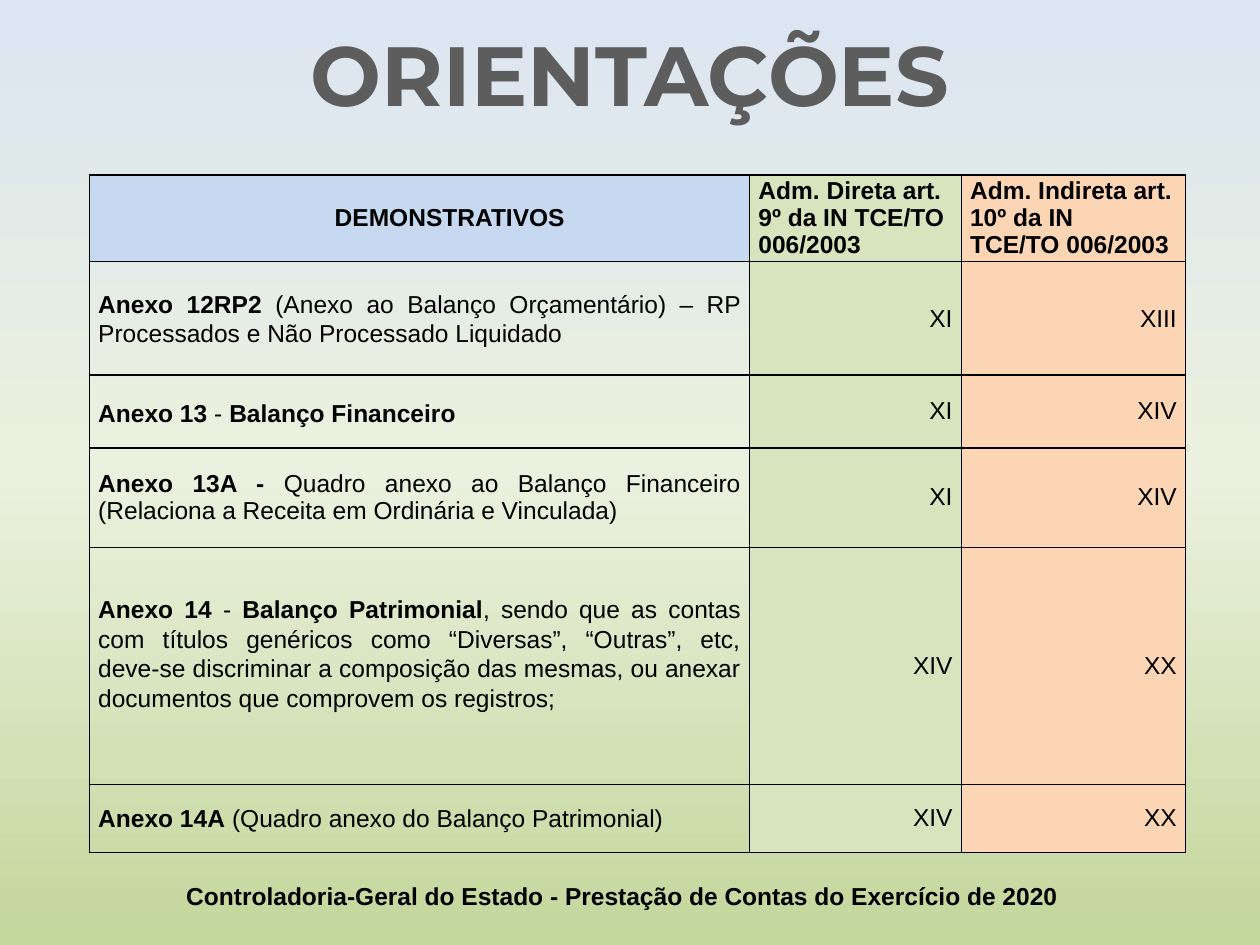
from copy import deepcopy

from lxml import etree
from pptx import Presentation
from pptx.dml.color import RGBColor
from pptx.enum.text import MSO_ANCHOR, MSO_AUTO_SIZE, PP_ALIGN
from pptx.oxml.ns import qn
from pptx.util import Inches, Pt

CENTER, LEFT, RIGHT, JUSTIFY = PP_ALIGN.CENTER, PP_ALIGN.LEFT, PP_ALIGN.RIGHT, PP_ALIGN.JUSTIFY
MIDDLE = MSO_ANCHOR.MIDDLE
FIT_SHAPE = MSO_AUTO_SIZE.SHAPE_TO_FIT_TEXT
TITLE_ONLY = 5

BLUE, GREEN, ORANGE = "C6D9F1", "D7E4BD", "FCD5B5"
COLUMN_WIDTHS = [5.24, 1.68, 1.78]
ROW_HEIGHTS = [0.63, 0.9, 0.58, 0.79, 1.88, 0.54]

# Each paragraph is a list of spans: (words, bold).
HEADERS = [
    [[("DEMONSTRATIVOS", True)]],
    [[("Adm. Direta art. 9º da IN TCE/TO 006/2003", True)]],
    [[("Adm. Indireta art. 10º da IN", True)], [("TCE/TO 006/2003", True)]],
]
# Description, direct and indirect item, line spacing, space kept below the description.
ROWS = [
    ([("Anexo 12RP2 ", True),
      ("(Anexo ao Balanço Orçamentário) – RP Processados e Não Processado Liquidado", False)],
     "XI", "XIII", 1.07, 0),
    ([("Anexo 13", True), (" - ", False), ("Balanço Financeiro", True)],
     "XI", "XIV", 1.15, 0),
    ([("Anexo 13A - ", True),
      ("Quadro anexo ao Balanço Financeiro (Relaciona a Receita em Ordinária e Vinculada)", False)],
     "XI", "XIV", 0.98, 0),
    ([("Anexo 14", True), (" - ", False), ("Balanço Patrimonial", True),
      (", sendo que as contas com títulos genéricos como “Diversas”, “Outras”, etc, deve-se "
       "discriminar a composição das mesmas, ou anexar documentos que comprovem os registros;",
       False)],
     "XIV", "XX", 1.07, 0.2),
    ([("Anexo 14A", True), (" (Quadro anexo do Balanço Patrimonial)", False)],
     "XIV", "XX", 1.07, 0),
]


def color(value):
    return RGBColor.from_string(value)


def write(frame, paragraphs, size=14, font="Arial", ink="000000", align=LEFT,
          spacing=None, indent=0):
    """Fill a text frame with paragraphs made of (words, bold) spans."""
    for index, spans in enumerate(paragraphs):
        para = frame.add_paragraph() if index else frame.paragraphs[0]
        para.alignment = align
        if spacing:
            para.line_spacing = spacing
        if indent:
            para._p.get_or_add_pPr().set("indent", str(Inches(indent)))
        for words, bold in spans:
            span = para.add_run()
            span.text = words
            span.font.name = font
            span.font.size = Pt(size)
            span.font.bold = bold
            span.font.color.rgb = color(ink)


def add_borders(cell, ink="000000", width=1):
    properties = cell._tc.get_or_add_tcPr()
    for index, side in enumerate(("lnL", "lnR", "lnT", "lnB")):
        line = etree.Element(qn(f"a:{side}"), w=str(Pt(width)))
        fill = etree.SubElement(line, qn("a:solidFill"))
        etree.SubElement(fill, qn("a:srgbClr"), val=ink)
        properties.insert(index, line)


class SlideBuilder:
    def __init__(self, deck):
        self.slide = deck.slides.add_slide(deck.slide_layouts[TITLE_ONLY])

    def background(self, *colors):
        """Spread the colours evenly from top to bottom."""
        fill = self.slide.background.fill
        fill.gradient()
        fill.gradient_angle = 270
        stops = self.slide.element.find(".//" + qn("a:gsLst"))
        while len(stops) < len(colors):
            stops.append(deepcopy(stops[0]))
        for index, (stop, value) in enumerate(zip(fill.gradient_stops, colors)):
            stop.position = index / (len(colors) - 1)
            stop.color.rgb = color(value)

    def place(self, box, left, top, width, height):
        box.left, box.top = Inches(left), Inches(top)
        box.width, box.height = Inches(width), Inches(height)

    def title(self, words, area):
        box = self.slide.shapes.title
        self.place(box, *area)
        box.text_frame.word_wrap = True
        box.text_frame.auto_size = FIT_SHAPE
        write(box.text_frame, [[(words, True)]], size=48, font="Montserrat",
              ink="5D5D5D", align=CENTER)

    def text(self, words, area):
        box = self.slide.shapes.add_textbox(*map(Inches, area))
        box.text_frame.word_wrap = True
        box.text_frame.auto_size = FIT_SHAPE
        write(box.text_frame, [[(words, True)]], align=CENTER)

    def cell(self, cell, paragraphs, fill=None, space_below=0, **style):
        cell.vertical_anchor = MIDDLE
        cell.margin_left = cell.margin_right = Inches(0.07)
        cell.margin_top, cell.margin_bottom = 0, Inches(space_below)
        if fill:
            cell.fill.solid()
            cell.fill.fore_color.rgb = color(fill)
        else:
            cell.fill.background()
        add_borders(cell)
        write(cell.text_frame, paragraphs, **style)

    def table(self, left, top):
        table = self.slide.shapes.add_table(
            len(ROW_HEIGHTS), len(COLUMN_WIDTHS), Inches(left), Inches(top),
            Inches(sum(COLUMN_WIDTHS)), Inches(sum(ROW_HEIGHTS))).table
        table.first_row = table.horz_banding = False
        for column, width in zip(table.columns, COLUMN_WIDTHS):
            column.width = Inches(width)
        for row, height in zip(table.rows, ROW_HEIGHTS):
            row.height = Inches(height)

        styles = [(BLUE, CENTER, 0.48), (GREEN, LEFT, 0), (ORANGE, LEFT, 0)]
        for column, (paragraphs, (fill, align, indent)) in enumerate(zip(HEADERS, styles)):
            self.cell(table.cell(0, column), paragraphs, fill, align=align,
                      spacing=0.98, indent=indent)
        for row, (spans, direct, indirect, spacing, below) in enumerate(ROWS, 1):
            self.cell(table.cell(row, 0), [spans], space_below=below,
                      align=JUSTIFY, spacing=spacing)
            for column, (item, fill) in enumerate([(direct, GREEN), (indirect, ORANGE)], 1):
                self.cell(table.cell(row, column), [[(item, False)]], fill,
                          align=RIGHT, spacing=1.07 if row == 1 else 0.98)


def main():
    deck = Presentation()
    deck.slide_width, deck.slide_height = Inches(10), Inches(7.5)
    page = SlideBuilder(deck)
    page.background("DCE6F2", "EBF1DE", "C3D69B")
    page.text("Controladoria-Geral do Estado - Prestação de Contas do Exercício de 2020",
              (0.55, 6.94, 8.78, 0.34))
    page.table(0.71, 1.39)
    page.title("ORIENTAÇÕES", (0.06, 0.12, 9.88, 0.91))
    deck.save("out.pptx")


if __name__ == "__main__":
    main()
